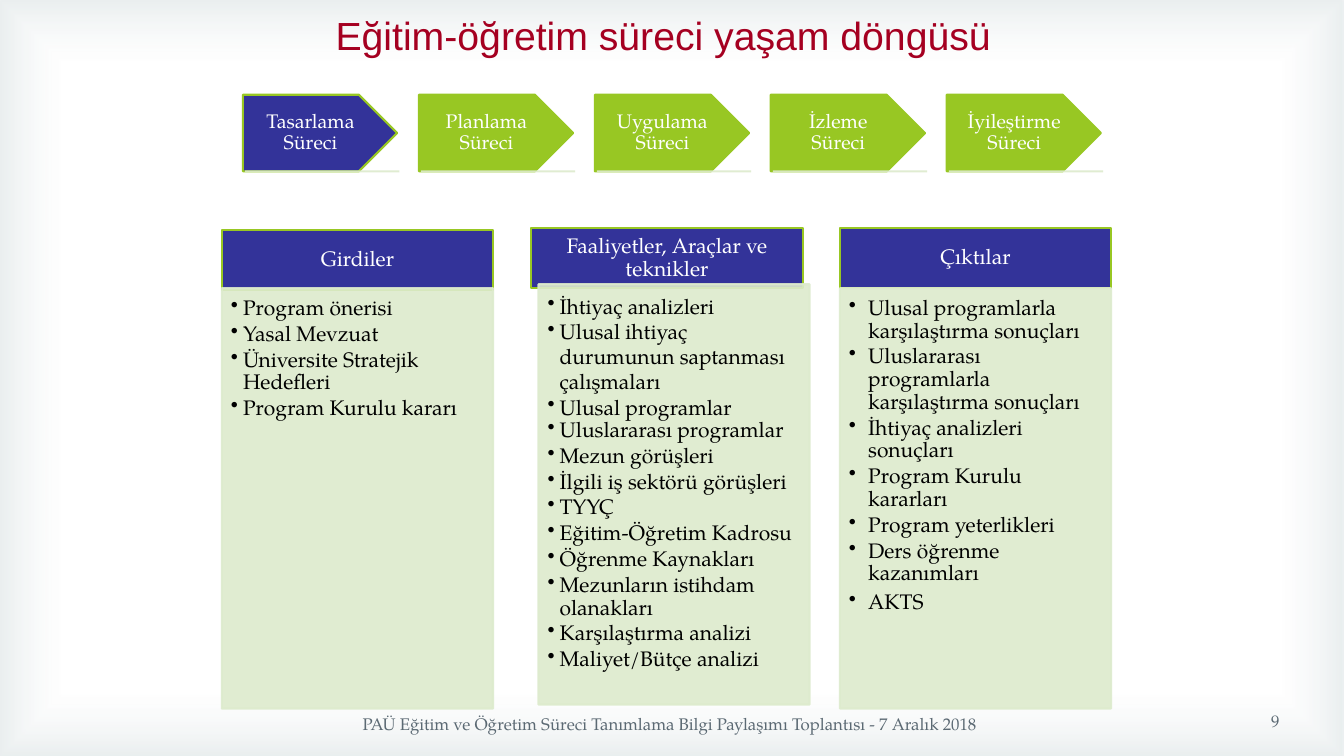
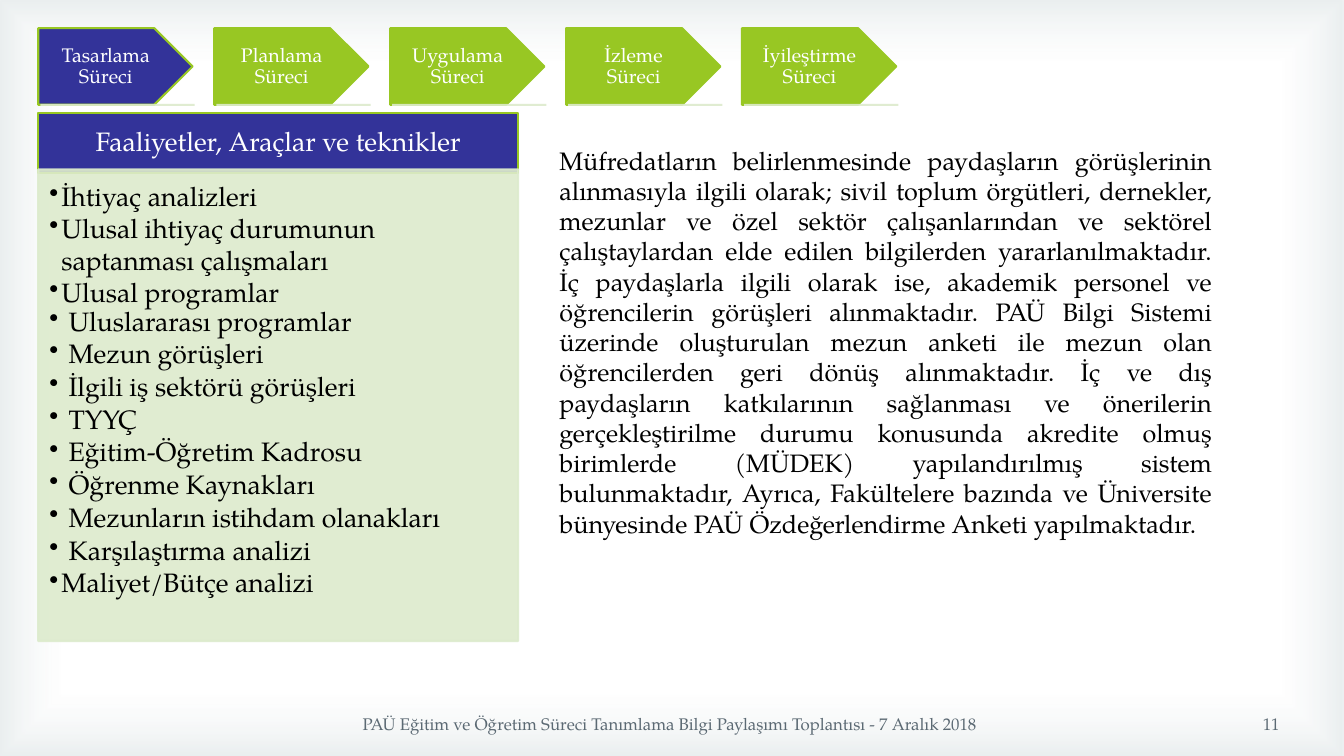
from dataclasses import dataclass

from lxml import etree
from pptx import Presentation, util as u
from pptx.dml import color
from pptx.enum import shapes, text
from pptx.oxml import ns, parse_xml


@dataclass(frozen=True)
class Theme:
    serif: str = "TeX Gyre Pagella"
    sans: str = "Arial"
    navy: str = "333399"
    lime: str = "98C723"
    pale: str = "DDEBCD"
    red: str = "A50021"
    gray: str = "5B6973"
    white: str = "FFFFFF"
    black: str = "000000"
    edge: str = "A4B7BB"
    title: int = 28
    prose: int = 18
    large: int = 19
    small: int = 15
    step: int = 14
    foot: int = 12
    line: float = 1.5


T = Theme()
ALIGN = text.PP_ALIGN
STEPS = ["Tasarlama", "Planlama", "Uygulama", "İzleme", "İyileştirme"]
FOOT = "PAÜ Eğitim ve Öğretim Süreci Tanımlama Bilgi Paylaşımı Toplantısı - 7 Aralık 2018"
TASKS = "Faaliyetler, Araçlar ve teknikler"
NEEDS = ["İhtiyaç analizleri", "Ulusal ihtiyaç durumunun saptanması çalışmaları", "Ulusal programlar"]
TOOLS = [
    "Uluslararası programlar", "Mezun görüşleri", "İlgili iş sektörü görüşleri", "TYYÇ",
    "Eğitim-Öğretim Kadrosu", "Öğrenme Kaynakları", "Mezunların istihdam olanakları",
    "Karşılaştırma analizi",
]
COST = "Maliyet/Bütçe analizi"
INPUTS = ["Program önerisi", "Yasal Mevzuat", "Üniversite Stratejik Hedefleri", "Program Kurulu kararı"]
RESULTS = [
    "Ulusal programlarla karşılaştırma sonuçları",
    "Uluslararası programlarla karşılaştırma sonuçları",
    "İhtiyaç analizleri sonuçları", "Program Kurulu kararları",
    "Program yeterlikleri", "Ders öğrenme kazanımları",
]
PROSE = (
    "Müfredatların belirlenmesinde paydaşların görüşlerinin alınmasıyla ilgili olarak; "
    "sivil toplum örgütleri, dernekler, mezunlar ve özel sektör çalışanlarından ve sektörel "
    "çalıştaylardan elde edilen bilgilerden yararlanılmaktadır. İç paydaşlarla ilgili olarak ise, "
    "akademik personel ve öğrencilerin görüşleri alınmaktadır. PAÜ Bilgi Sistemi üzerinde "
    "oluşturulan mezun anketi ile mezun olan öğrencilerden geri dönüş alınmaktadır. İç ve dış "
    "paydaşların katkılarının sağlanması ve önerilerin gerçekleştirilme durumu konusunda akredite "
    "olmuş birimlerde (MÜDEK) yapılandırılmış sistem bulunmaktadır, Ayrıca, Fakültelere bazında "
    "ve Üniversite bünyesinde PAÜ Özdeğerlendirme Anketi yapılmaktadır."
)


def rgb(tone):
    return color.RGBColor.from_string(tone)


def inch(*sides):
    return [u.Inches(side) for side in sides]


def fade(shape):
    for tone in shape.element.spPr.iter(ns.qn("a:srgbClr")):
        etree.SubElement(tone, ns.qn("a:alpha")).set("val", "90000")


def write(para, words, size, tone, font=T.serif, align=ALIGN.LEFT):
    para.alignment = align
    run = para.add_run()
    run.text = words
    run.font.size = u.Pt(size)
    run.font.name = font
    run.font.color.rgb = rgb(tone)


def inset(frame, left, top, right, base):
    frame.margin_left, frame.margin_top, frame.margin_right, frame.margin_bottom = inch(
        left, top, right, base)


def block(slide, kind, box, fill, line):
    shape = slide.shapes.add_shape(kind, *inch(*box))
    shape.shadow.inherit = False
    shape.fill.solid()
    shape.fill.fore_color.rgb = rgb(fill)
    shape.line.color.rgb = rgb(line)
    shape.line.width = u.Pt(T.line)
    return shape


def label(slide, kind, box, fill, words, size, pad):
    frame = block(slide, kind, box, fill, T.lime).text_frame
    inset(frame, *pad * 2)
    frame.vertical_anchor = text.MSO_ANCHOR.MIDDLE
    para = frame.paragraphs[0]
    para.line_spacing = 0.9
    write(para, words, size, T.white, align=ALIGN.CENTER)


def note(slide, box, words, size, tone, font=T.serif, align=ALIGN.LEFT, wrap=True,
         anchor=text.MSO_ANCHOR.TOP):
    frame = slide.shapes.add_textbox(*inch(*box)).text_frame
    frame.word_wrap = wrap
    frame.vertical_anchor = anchor
    para = frame.paragraphs[0]
    write(para, words, size, tone, font, align)
    return para


def rule(slide, left, top, width):
    line = slide.shapes.add_connector(
        shapes.MSO_CONNECTOR.STRAIGHT, *inch(left, top, left + width, top))
    line.line.color.rgb = rgb(T.pale)
    line.line.width = u.Pt(T.line)
    etree.SubElement(line.element.spPr, ns.qn("a:effectLst"))
    fade(line)


def chain(slide, left, top):
    wide, high, pitch = 1.53, 0.76, 6.98 / 4
    for i, name in enumerate(STEPS):
        x = left + i * pitch
        label(slide, shapes.MSO_SHAPE.PENTAGON, (x, top, wide, high),
              T.lime if i else T.navy, name + " Süreci", T.step, (0.11, 0.06))
        rule(slide, x + 0.02, top + high, wide)


def bullet(para, words, size, dent, tight):
    props = para._p.get_or_add_pPr()
    props.set("marL", str(u.Inches(dent)))
    props.set("indent", str(-u.Inches(dent)))
    if tight:
        para.line_spacing = 0.9
        para.space_after = u.Pt(size * 0.15)
    etree.SubElement(props, ns.qn("a:buChar")).set("char", "•")
    write(para, words, size, T.black)


def card(slide, head, body, name, parts, size, pad, rim):
    label(slide, shapes.MSO_SHAPE.RECTANGLE, head, T.navy, name, size, pad)
    panel = block(slide, shapes.MSO_SHAPE.RECTANGLE, body, T.pale, T.pale)
    fade(panel)
    frame = panel.text_frame
    inset(frame, *rim)
    frame.vertical_anchor = text.MSO_ANCHOR.TOP
    para = frame.paragraphs[0]
    for names, dent, tight in parts:
        for words in names:
            if para.runs:
                para = frame.add_paragraph()
            bullet(para, words, size, dent, tight)


def glow(deck, slide):
    rect = slide.shapes.add_shape(
        shapes.MSO_SHAPE.RECTANGLE, 0, 0, deck.slide_width, deck.slide_height)
    rect.shadow.inherit = False
    rect.line.fill.background()
    rect.fill.background()
    stops = "".join(
        f'<a:gs pos="{pos}000"><a:srgbClr val="{tone}"><a:alpha val="{alpha}000"/></a:srgbClr></a:gs>'
        for pos, tone, alpha in ((83, T.white, 11), (100, T.edge, 23)))
    grad = parse_xml(
        f'<a:gradFill {ns.nsdecls("a")} rotWithShape="1"><a:gsLst>{stops}</a:gsLst>'
        '<a:path path="rect"><a:fillToRect l="50000" t="50000" r="50000" b="50000"/></a:path>'
        '</a:gradFill>')
    props = rect.element.spPr
    props.replace(props.find(ns.qn("a:noFill")), grad)
    deck.slide_master.shapes.element.insert(2, rect.element)


def footer(slide, page, top):
    mid = text.MSO_ANCHOR.MIDDLE
    note(slide, (9.68, top, 3.11, 0.4), page, T.foot, T.gray, align=ALIGN.RIGHT, anchor=mid)
    note(slide, (1.54, 6.98, 10.21, 0.4), FOOT, T.foot, T.gray, align=ALIGN.CENTER, anchor=mid)


def cycle(slide):
    note(slide, (3.23, 0.06, 6.89, 0.57), "Eğitim-öğretim süreci yaşam döngüsü",
         T.title, T.red, T.sans, wrap=False)
    chain(slide, 2.41, 0.94)
    cards = [
        ((2.2, 2.28), (2.2, 2.86), "Girdiler", [(INPUTS, 0.12, True)]),
        ((5.27, 2.26), (5.34, 2.82), TASKS, [(NEEDS, 0.12, False), (TOOLS + [COST], 0.12, True)]),
        ((8.33, 2.26), (8.33, 2.86), "Çıktılar", [(RESULTS, 0.19, True), (["AKTS"], 0.19, False)]),
    ]
    for head, body, name, parts in cards:
        card(slide, (*head, 2.69, 0.6), (*body, 2.69, 4.17), name, parts,
             T.small, (0.12, 0.07), (0.09, 0.09, 0.12, 0.13))
    footer(slide, "9", 6.95)


def detail(slide):
    chain(slide, 0.38, 0.28)
    parts = [(NEEDS, 0.12, False), (TOOLS, 0.19, True), ([COST], 0.12, True)]
    card(slide, (0.38, 1.12, 4.76, 0.6), (0.38, 1.68, 4.76, 4.68), TASKS, parts,
         T.large, (0.15, 0.08), (0.11, 0.11, 0.15, 0.17))
    para = note(slide, (5.45, 1.39, 6.67, 4.04), PROSE, T.prose, T.black, align=ALIGN.JUSTIFY)
    para.space_before = para.space_after = u.Pt(6)
    footer(slide, "11", 6.98)


def main():
    deck = Presentation()
    deck.slide_width, deck.slide_height = inch(13.33, 7.5)
    first, second = [deck.slides.add_slide(deck.slide_layouts[6]) for _ in range(2)]
    glow(deck, first)
    cycle(first)
    detail(second)
    deck.save("out.pptx")


if __name__ == "__main__":
    main()
